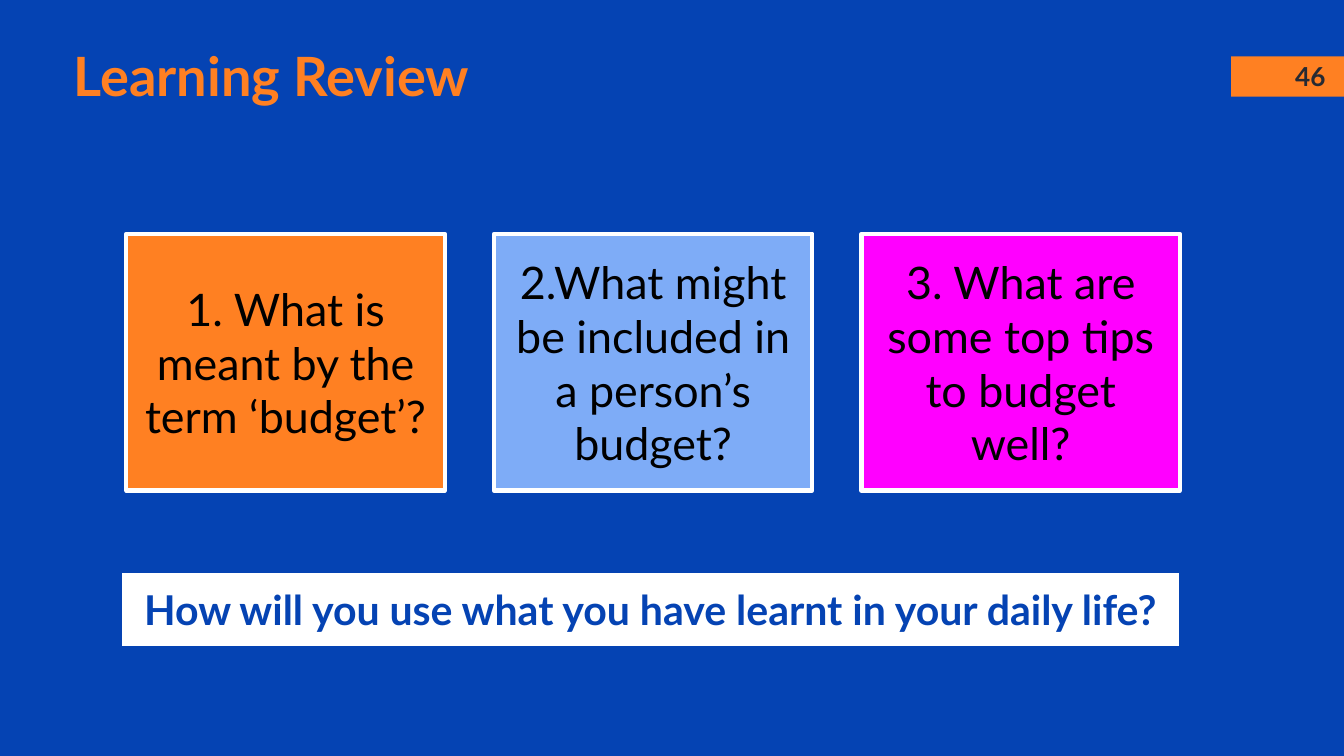
from pptx import Presentation
from pptx.dml.color import RGBColor
from pptx.enum.shapes import MSO_SHAPE
from pptx.enum.text import MSO_ANCHOR, MSO_AUTO_SIZE, PP_ALIGN
from pptx.util import Inches, Pt

BLUE = "0543B3"
ORANGE = "FF8022"
WHITE = "FFFFFF"
BLACK = "000000"
DARK_GREY = "262A33"

QUESTIONS = [
    ("1. What is meant by the term ‘budget’?", ORANGE),
    ("2.What might be included in a person’s budget?", "7EACF7"),
    ("3. What are some top tips to budget well?", "FF00FF"),
]


def rgb(color):
    return RGBColor.from_string(color)


def add_rectangle(slide, left, top, width, height, fill, line=None, line_width=0):
    shape = slide.shapes.add_shape(
        MSO_SHAPE.RECTANGLE, Inches(left), Inches(top), Inches(width), Inches(height))
    shape.shadow.inherit = False
    shape.fill.solid()
    shape.fill.fore_color.rgb = rgb(fill)
    if line:
        shape.line.color.rgb = rgb(line)
        shape.line.width = Pt(line_width)
    else:
        shape.line.fill.background()
    return shape


def add_text_box(slide, left, top, width, height):
    return slide.shapes.add_textbox(
        Inches(left), Inches(top), Inches(width), Inches(height))


def set_text(shape, text, size, color, bold=False,
             align=PP_ALIGN.CENTER, anchor=MSO_ANCHOR.MIDDLE):
    frame = shape.text_frame
    frame.word_wrap = True
    frame.vertical_anchor = anchor
    frame.margin_left = frame.margin_right = Inches(0.1)
    frame.margin_top = frame.margin_bottom = Inches(0.1)
    paragraph = frame.paragraphs[0]
    paragraph.text = text
    paragraph.alignment = align
    paragraph.font.name = "Lato"
    paragraph.font.size = Pt(size)
    paragraph.font.bold = bold
    paragraph.font.color.rgb = rgb(color)


def add_page_number(slide, left, top, width, height):
    add_rectangle(slide, left, top, width, height, ORANGE)
    number = add_text_box(slide, left + 0.33, top + 0.02, 0.52, 0.25)
    set_text(number, "46", 14, DARK_GREY, bold=True)


def add_title(slide, left, top, width, height):
    title = add_text_box(slide, left, top, width, height)
    set_text(title, "Learning Review", 29, ORANGE, bold=True, align=PP_ALIGN.LEFT)


def add_question_cards(slide, left, top, width, height):
    card_width = 2.37
    step = (width - card_width) / (len(QUESTIONS) - 1)
    for index, (question, fill) in enumerate(QUESTIONS):
        card = add_rectangle(
            slide, left + index * step, top, card_width, height, fill, WHITE, 2.25)
        set_text(card, question, 24, BLACK)


def add_closing_question(slide, left, top, width, height):
    banner = add_rectangle(slide, left, top, width, height, WHITE, BLUE, 1.5)
    set_text(banner, "How will you use what you have learnt in your daily life?",
             22, BLUE, bold=True, anchor=MSO_ANCHOR.TOP)
    banner.text_frame.auto_size = MSO_AUTO_SIZE.SHAPE_TO_FIT_TEXT


def main():
    presentation = Presentation()
    presentation.slide_width = Inches(10)
    presentation.slide_height = presentation.slide_width * 9 // 16
    slide = presentation.slides.add_slide(presentation.slide_layouts[6])
    slide.background.fill.solid()
    slide.background.fill.fore_color.rgb = rgb(BLUE)

    add_page_number(slide, 9.16, 0.42, 0.84, 0.3)
    add_question_cards(slide, 0.94, 1.74, 7.84, 1.91)
    add_title(slide, 0.45, 0.28, 6.38, 0.56)
    add_closing_question(slide, 0.9, 4.25, 7.88, 0.57)
    presentation.save("out.pptx")


if __name__ == "__main__":
    main()
